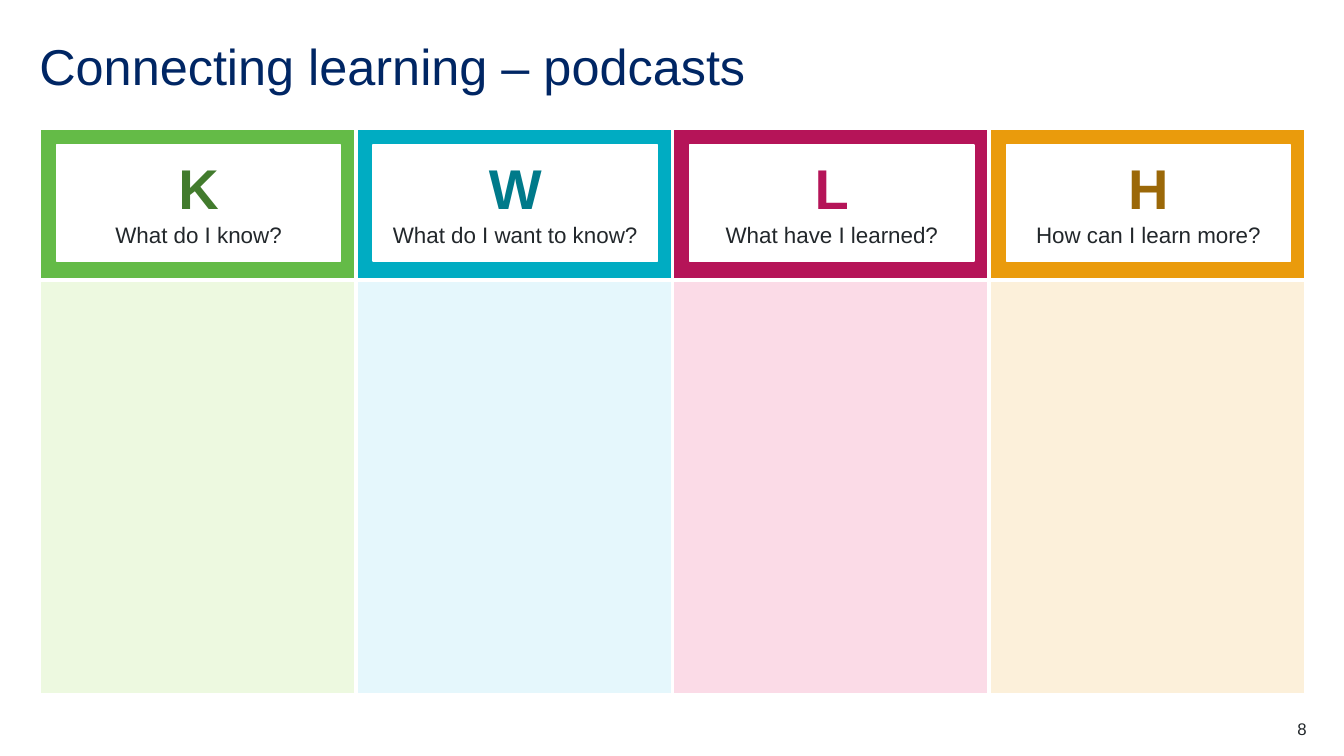
from pptx import Presentation
from pptx.dml.color import RGBColor
from pptx.enum.shapes import MSO_SHAPE as SHAPE
from pptx.enum.text import MSO_ANCHOR as ANCHOR, PP_ALIGN as ALIGN
from pptx.oxml.ns import qn
from pptx.util import Inches, Pt
from lxml.etree import SubElement

COLORS = {
    "white": "FFFFFF", "navy": "002664", "text": "22272B",
    "green": "64BB47", "green_dark": "427B2D", "green_pale": "EDF9E0",
    "teal": "00ACC2", "teal_dark": "007A8A", "teal_pale": "E5F7FC",
    "pink": "B51458", "pink_dark": "B51458", "pink_pale": "FBDBE7",
    "amber": "EA9B0C", "amber_dark": "9B6808", "amber_pale": "FAE6C2",
}
COLUMNS = [
    ("K", "What do I know?", "green"),
    ("W", "What do I want to know?", "teal"),
    ("L", "What have I learned?", "pink"),
    ("H", "How can I learn more?", "amber"),
]
HEADER_H = 1.51
LETTER = {"size": Pt(40), "bold": True}
QUESTION = {"size": Pt(16), "bold": False}


def color(name):
    return RGBColor.from_string(COLORS[name])


def add_run(p, text, color_name, fmt):
    r = p.add_run()
    r.text = text
    r.font.color.rgb = color(color_name)
    for name, value in {"name": "Arial", **fmt}.items():
        setattr(r.font, name, value)


def add_textbox(s, box, lines, align, inset=0, spacing=None):
    """Add a middle-anchored text box; lines hold (text, color, format)."""
    tf = s.shapes.add_textbox(*map(Inches, box)).text_frame
    settings = {"word_wrap": True, "vertical_anchor": ANCHOR.MIDDLE,
                "margin_left": Inches(inset), "margin_right": Inches(inset),
                "margin_top": Inches(inset / 2), "margin_bottom": Inches(inset / 2)}
    for name, value in settings.items():
        setattr(tf, name, value)
    for i, line in enumerate(lines):
        p = tf.add_paragraph() if i else tf.paragraphs[0]
        p.alignment = align
        p.line_spacing = spacing
        add_run(p, *line)


def format_cell(cell, color_name, alpha=None):
    """Fill a cell and give it thick white borders."""
    cell.fill.solid()
    cell.fill.fore_color.rgb = color(color_name)
    tc_pr = cell._tc.get_or_add_tcPr()
    if alpha:
        rgb = tc_pr.find(".//" + qn("a:srgbClr"))
        SubElement(rgb, qn("a:alpha"), val=str(alpha * 1000))
    for i, side in enumerate(("lnL", "lnR", "lnT", "lnB")):
        ln = tc_pr.makeelement(qn("a:" + side), {"w": str(Pt(3))})
        tc_pr.insert(i, ln)
        fill = SubElement(ln, qn("a:solidFill"))
        SubElement(fill, qn("a:srgbClr"), val=COLORS["white"])


def add_header_panel(s, box, letter, question, hue):
    x, y, w, h = box
    panel = s.shapes.add_shape(SHAPE.RECTANGLE, *map(Inches, box))
    panel.shadow.inherit = False
    panel.fill.solid()
    panel.fill.fore_color.rgb = color("white")
    panel.line.color.rgb = color("white")
    panel.line.width = Pt(1)
    add_textbox(s, (x, y + 0.01, w, 1.08),
                [(letter, hue + "_dark", LETTER), (question, "text", QUESTION)],
                ALIGN.CENTER, inset=0.1)


def add_kwlh_chart(s, box):
    """Place the four-column table and its header panels in the box."""
    x, y, w, h = box
    col_w = w / len(COLUMNS)
    table = s.shapes.add_table(2, len(COLUMNS), *map(Inches, box)).table
    table.first_row = table.horz_banding = False
    for row, height in zip(table.rows, (HEADER_H, h - HEADER_H)):
        row.height = Inches(height)
    for i, (letter, question, hue) in enumerate(COLUMNS):
        table.columns[i].width = Inches(col_w)
        format_cell(table.cell(0, i), hue)
        format_cell(table.cell(1, i), hue + "_pale", 60 if hue == "amber" else None)
        panel = (x + i * col_w + 0.17, y + 0.17, 2.82, 1.15)
        add_header_panel(s, panel, letter, question, hue)


def main():
    prs = Presentation()
    prs.slide_width, prs.slide_height = Inches(13.33), Inches(7.5)
    s = prs.slides.add_slide(prs.slide_layouts[6])
    add_textbox(s, (0.39, 0.39, 12.56, 0.6),
                [("Connecting learning – podcasts", "navy", {"size": Pt(36)})],
                ALIGN.LEFT, spacing=0.9)
    add_kwlh_chart(s, (0.39, 1.27, 12.56, 5.62))
    add_textbox(s, (12.17, 7.13, 0.79, 0.2),
                [("8", "text", {"size": Pt(12)})], ALIGN.RIGHT)
    prs.save("out.pptx")


if __name__ == "__main__":
    main()
